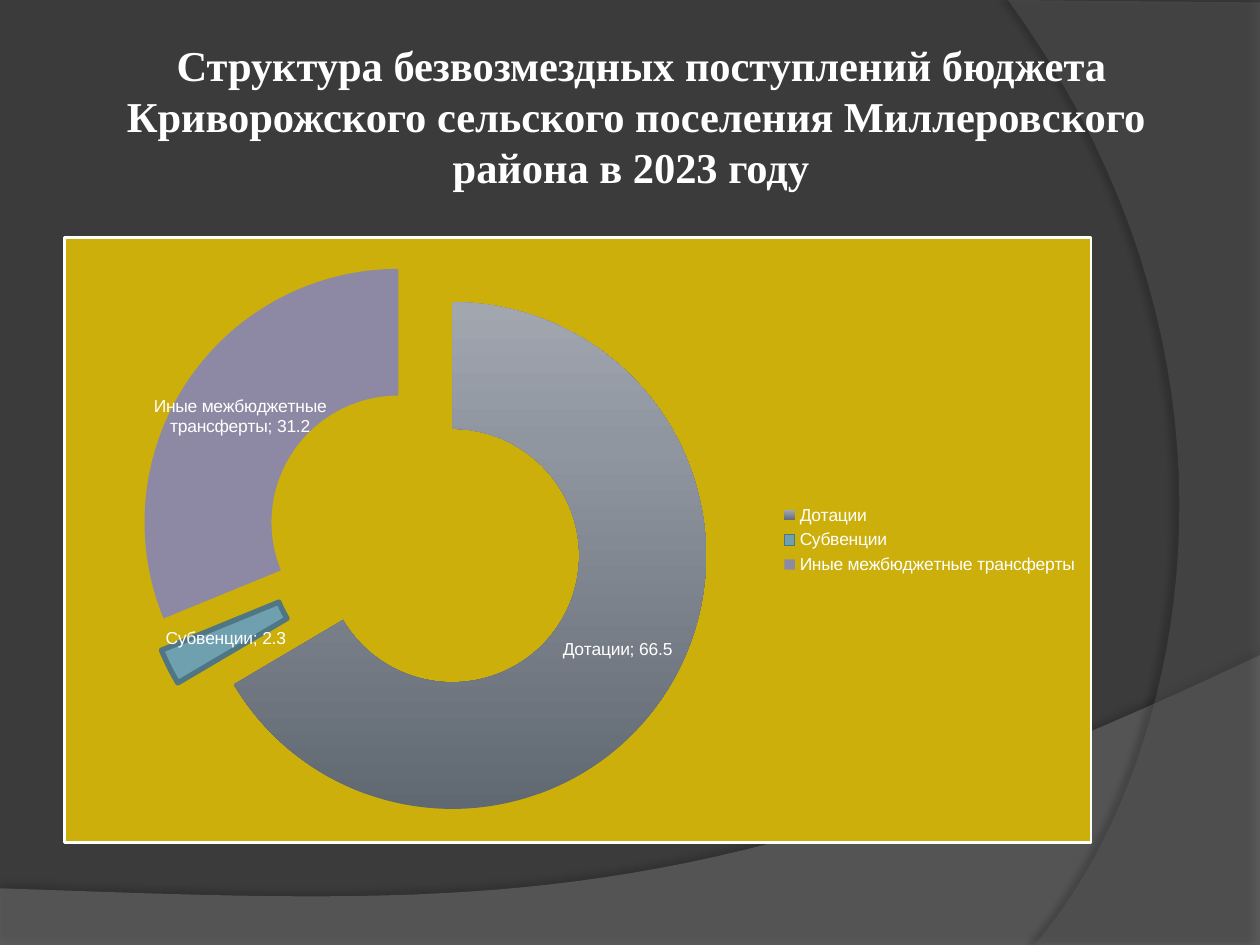
from copy import deepcopy
from dataclasses import dataclass
from typing import NamedTuple

from lxml.etree import SubElement
from pptx import Presentation
from pptx.chart.data import CategoryChartData
from pptx.dml.color import RGBColor
from pptx.enum.chart import XL_CHART_TYPE, XL_LEGEND_POSITION
from pptx.enum.text import MSO_ANCHOR, MSO_AUTO_SIZE, PP_ALIGN
from pptx.oxml import parse_xml
from pptx.oxml.ns import nsdecls, qn
from pptx.util import Emu, Inches, Pt

SLIDE_WIDTH, SLIDE_HEIGHT = Inches(10), Inches(7.5)
COLUMNS, ROWS = 100, 75
CURVE_STEPS = 40


@dataclass(frozen=True)
class Theme:
    background: str = "3B3B3B"
    text: str = "FFFFFF"
    chart_fill: str = "CCAF0A"
    subsidy_border: str = "4F7682"
    title_font: str = "Times New Roman"
    chart_font: str = "Arial"
    title_size: float = 24.3
    chart_size: float = 10
    frame_width: float = 1.5
    subsidy_border_width: float = 3


class GridPoint(NamedTuple):
    column: float
    row: float


class Box(NamedTuple):
    column: float
    row: float
    columns: float
    rows: float

    def lengths(self) -> tuple[Emu, Emu, Emu, Emu]:
        return (across(self.column), down(self.row),
                across(self.columns), down(self.rows))


class Wave(NamedTuple):
    corners: list[GridPoint]
    curve: list[GridPoint]
    color: str
    opacity: int
    shadow_opacity: int
    shadow_distance: float
    shadow_angle: int


class Share(NamedTuple):
    label: str
    value: float
    stops: list[tuple[float, str]]


THEME = Theme()
TITLE = (" Структура безвозмездных поступлений бюджета Криворожского "
         "сельского поселения Миллеровского района в 2023 году ")
TITLE_BOX = Box(5.5, 4.7, 90, 18.8)
CHART_BOX = Box(5, 18.75, 81.7, 48.2)
WAVES = [
    Wave([GridPoint(0, 75), GridPoint(100, 75)],
         [GridPoint(100, 52), GridPoint(55.9, 72.9), GridPoint(39.1, 71.9), GridPoint(0, 70.5)],
         "7F7F7F", 45, 35, 3.5, 270),
    Wave([GridPoint(100, 0.2), GridPoint(100, 75)],
         [GridPoint(82.1, 75), GridPoint(93.5, 61.9), GridPoint(101.8, 30), GridPoint(80, 0)],
         "5E5E5E", 40, 45, 4, 180),
]
SHARES = [
    Share("Дотации", 66.5, [(0, "606872"), (0.72, "9096A0"), (1, "A1A6AF")]),
    Share("Субвенции", 2.3, [(0, "6EA0B0")]),
    Share("Иные межбюджетные трансферты", 31.2, [(0, "8D89A4")]),
]


def across(columns: float) -> Emu:
    return Emu(round(SLIDE_WIDTH * columns / COLUMNS))


def down(rows: float) -> Emu:
    return Emu(round(SLIDE_HEIGHT * rows / ROWS))


def color(value: str) -> RGBColor:
    return RGBColor.from_string(value)


def curve_points(controls: list[GridPoint]) -> list[GridPoint]:
    points = []
    for step in range(CURVE_STEPS + 1):
        t = step / CURVE_STEPS
        weights = ((1 - t) ** 3, 3 * t * (1 - t) ** 2, 3 * t ** 2 * (1 - t), t ** 3)
        points.append(GridPoint(
            sum(weight * point.column for weight, point in zip(weights, controls)),
            sum(weight * point.row for weight, point in zip(weights, controls))))
    return points


def draw_wave(slide, wave: Wave) -> None:
    outline = [(across(point.column), down(point.row))
               for point in wave.corners + curve_points(wave.curve)]
    builder = slide.shapes.build_freeform(*outline[0])
    builder.add_line_segments(outline[1:], close=True)
    shape = builder.convert_to_shape()
    shape.shadow.inherit = False
    shape.line.fill.background()
    shape.fill.solid()
    shape.fill.fore_color.rgb = color(wave.color)
    properties = shape.element.spPr
    SubElement(next(properties.iter(qn("a:srgbClr"))), qn("a:alpha"),
               val=str(wave.opacity * 1000))
    shadow = SubElement(properties.find(qn("a:effectLst")), qn("a:outerShdw"),
                        blurRad=str(Pt(4)), dist=str(Pt(wave.shadow_distance)),
                        dir=str(wave.shadow_angle * 60000), rotWithShape="0")
    shadow_color = SubElement(shadow, qn("a:srgbClr"), val="000000")
    SubElement(shadow_color, qn("a:alpha"), val=str(wave.shadow_opacity * 1000))


def draw_title(slide) -> None:
    shape = slide.shapes.title
    shape.left, shape.top, shape.width, shape.height = TITLE_BOX.lengths()
    slide.shapes.element.append(shape.element)
    frame = shape.text_frame
    frame.text = TITLE
    frame.word_wrap = True
    frame.auto_size = MSO_AUTO_SIZE.NONE
    frame.vertical_anchor = MSO_ANCHOR.MIDDLE
    frame.margin_left = frame.margin_right = frame.margin_top = Inches(0.05)
    frame.margin_bottom = Inches(1.03)
    paragraph = frame.paragraphs[0]
    paragraph.alignment = PP_ALIGN.CENTER
    paragraph.line_spacing = 1
    font = paragraph.runs[0].font
    font.name, font.size, font.bold = THEME.title_font, Pt(THEME.title_size), True
    font.color.rgb = color(THEME.text)


def format_font(font) -> None:
    font.name, font.size = THEME.chart_font, Pt(THEME.chart_size)
    font.color.rgb = color(THEME.text)


def fill_point(point, share: Share) -> None:
    fill = point.format.fill
    if len(share.stops) == 1:
        fill.solid()
        fill.fore_color.rgb = color(share.stops[0][1])
        return
    fill.gradient()
    fill.gradient_angle = 90
    stop_list = next(point.format.fill._xPr.iter(qn("a:gsLst")))
    stop_list.append(deepcopy(stop_list[-1]))
    for stop, (position, value) in zip(fill.gradient_stops, share.stops):
        stop.position = position
        stop.color.rgb = color(value)


def frame_chart(chart) -> None:
    properties = parse_xml(
        f'<c:spPr {nsdecls("c", "a")}>'
        f'<a:solidFill><a:srgbClr val="{THEME.chart_fill}"/></a:solidFill>'
        f'<a:ln w="{Pt(THEME.frame_width)}"><a:solidFill>'
        f'<a:srgbClr val="{THEME.text}"/></a:solidFill></a:ln></c:spPr>')
    chart.element.find(qn("c:txPr")).addprevious(properties)


def draw_chart(slide) -> None:
    data = CategoryChartData()
    data.categories = [share.label for share in SHARES]
    data.add_series("Series 1", [share.value for share in SHARES])
    chart = slide.shapes.add_chart(XL_CHART_TYPE.DOUGHNUT, *CHART_BOX.lengths(), data).chart
    chart.has_title = False
    format_font(chart.font)
    frame_chart(chart)
    chart.has_legend = True
    chart.legend.position = XL_LEGEND_POSITION.RIGHT
    chart.legend.include_in_layout = False
    format_font(chart.legend.font)

    plot = chart.plots[0]
    plot.vary_by_categories = True
    plot._element.find(qn("c:holeSize")).set("val", "50")
    series = plot.series[0]
    for index, share in enumerate(SHARES):
        fill_point(series.points[index], share)
    border = series.points[1].format.line
    border.color.rgb = color(THEME.subsidy_border)
    border.width = Pt(THEME.subsidy_border_width)
    points = series._element.findall(qn("c:dPt"))
    followers = [points[0]] + [point.find(qn("c:spPr")) for point in points]
    for follower in followers:
        follower.addprevious(parse_xml(f'<c:explosion {nsdecls("c")} val="25"/>'))
    labels = series.data_labels
    labels.show_value = labels.show_category_name = True
    labels.show_percentage = False
    format_font(labels.font)


def main() -> None:
    presentation = Presentation()
    presentation.slide_width, presentation.slide_height = SLIDE_WIDTH, SLIDE_HEIGHT
    slide = presentation.slides.add_slide(presentation.slide_layouts[5])
    slide.background.fill.solid()
    slide.background.fill.fore_color.rgb = color(THEME.background)
    for wave in WAVES:
        draw_wave(slide, wave)
    draw_title(slide)
    draw_chart(slide)
    presentation.save("out.pptx")


if __name__ == "__main__":
    main()
